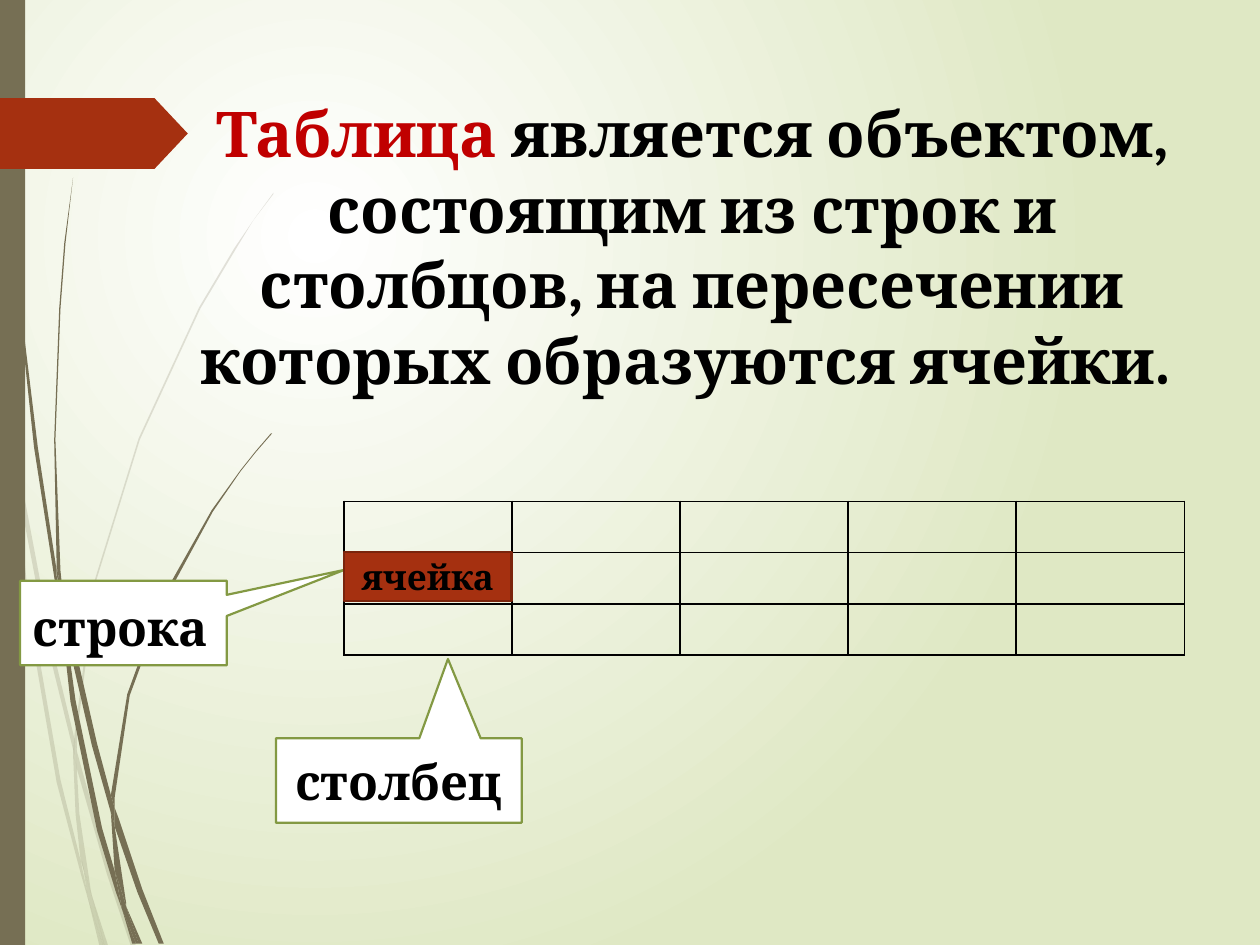
from dataclasses import dataclass

from lxml.etree import SubElement
from pptx import Presentation
from pptx.dml.color import RGBColor
from pptx.enum.shapes import MSO_SHAPE
from pptx.enum.text import MSO_ANCHOR, MSO_AUTO_SIZE, PP_ALIGN
from pptx.oxml.ns import qn
from pptx.util import Inches, Pt


@dataclass(frozen=True)
class Theme:
    font: str = "Cambria"
    ink: str = "000000"
    accent: str = "C00000"
    white: str = "FFFFFF"
    pale_green: str = "DFE8C4"
    green: str = "839943"
    olive: str = "766F54"
    rust: str = "A53010"
    dark_rust: str = "7A240C"
    title_size: int = 36
    callout_size: int = 28
    cell_size: int = 20
    outline: float = 1.25
    grid: float = 1


@dataclass(frozen=True)
class Box:
    left: float
    top: float
    width: float
    height: float

    def lengths(self) -> tuple:
        return tuple(Inches(v) for v in (self.left, self.top, self.width, self.height))


@dataclass(frozen=True)
class Label:
    box: Box
    kind: MSO_SHAPE
    fill: str
    line: str = ""
    text: str = ""
    size: int = 0
    adjustments: tuple = ()


THEME = Theme()

# Outlines of the grass blades, in inches
FAINT_BLADES = [
    [(.08, 3.5), (.06, 3.22), (0, 2.82), (0, 2.99), (.07, 3.44)],
    [(.4, 5.22), (.59, 5.99), (.59, 5.86), (.43, 5.2), (.1, 3.45), (.12, 3.76)],
    [(.64, 6.07), (.61, 5.96), (.61, 6.1), (.85, 6.94), (1.04, 7.51), (1.08, 7.51),
     (.88, 6.92)],
    [(.83, 7.51), (.86, 7.51), (.73, 7.11)],
    [(.64, 6.83), (.48, 6.19), (.22, 4.69), (.12, 3.76), (.08, 3.5), (.19, 4.7),
     (.45, 6.21), (.64, 6.93), (.7, 7.14), (.69, 7.07)],
    [(.58, 5.99), (.6, 6.46), (.64, 6.83), (.67, 6.92), (.73, 7.11), (.72, 7.06),
     (.63, 6.46), (.61, 6.1), (.61, 6.08)],
    [(.61, 5.84), (.76, 4.62), (1.11, 3.49), (1.59, 2.45), (1.87, 1.98), (2.01, 1.75),
     (2.17, 1.54), (2.17, 1.53), (2.01, 1.75), (1.86, 1.97), (1.58, 2.44), (1.1, 3.48),
     (.75, 4.61), (.59, 5.84), (.59, 5.86), (.61, 5.96)],
    [(.7, 7.14), (.79, 7.51), (.82, 7.51)],
    [(.61, 6.08), (.61, 6.1), (.61, 5.96), (.59, 5.86), (.58, 5.99)],
    [(.67, 6.92), (.65, 6.83), (.69, 7.07), (.7, 7.14), (.82, 7.51), (.83, 7.51),
     (.73, 7.11)],
]
SOLID_BLADES = [
    [(.05, 1.1), (.14, 2.33), (.27, 3.55), (.46, 4.77), (.47, 4.81), (.45, 4.57),
     (.45, 4.53), (.3, 3.55), (.15, 2.32), (.06, 1.09), (.04, .48), (.03, 0), (.02, 0),
     (.03, .48)],
    [(.73, 5.92), (.88, 6.45), (.88, 6.33), (.88, 6.31), (.77, 5.9), (.5, 4.72),
     (.53, 5.05)],
    [(.94, 6.49), (.91, 6.41), (.91, 6.56), (1.09, 7.08), (1.26, 7.49), (1.3, 7.49),
     (1.13, 7.06)],
    [(.91, 6.91), (.81, 6.57), (.6, 5.56), (.53, 5.05), (.47, 4.77), (.56, 5.57),
     (.77, 6.59), (.92, 7.08), (.97, 7.22), (.96, 7.17)],
    [(.5, 4.72), (.48, 4.53), (.44, 3.49), (.48, 2.45), (.52, 1.93), (.58, 1.41),
     (.51, 1.93), (.47, 2.45), (.43, 3.49), (.45, 4.49), (.49, 4.72)],
    [(1.1, 7.49), (1.13, 7.49), (1, 7.19)],
    [(.47, 4.77), (.53, 5.05), (.5, 4.72), (.49, 4.72), (.45, 4.49), (.45, 4.53)],
    [(.91, 6.33), (1.03, 5.52), (1.31, 4.76), (1.69, 4.06), (1.91, 3.74), (2.03, 3.59),
     (2.16, 3.44), (2.15, 3.44), (2.03, 3.58), (1.91, 3.73), (1.68, 4.05), (1.29, 4.74),
     (1.01, 5.51), (.88, 6.31), (.91, 6.41)],
    [(.97, 7.22), (1.05, 7.49), (1.08, 7.49)],
    [(.88, 6.45), (.91, 6.91), (.96, 7.06), (1, 7.19), (1, 7.16), (.91, 6.56),
     (.9, 6.51)],
    [(.88, 6.45), (.9, 6.51), (.91, 6.56), (.91, 6.41), (.88, 6.31), (.88, 6.33)],
    [(.96, 7.06), (.91, 6.91), (.96, 7.17), (.97, 7.22), (1.08, 7.49), (1.1, 7.49),
     (1, 7.19)],
]


def paint(shape, fill: str, line: str = "") -> None:
    shape.shadow.inherit = False
    shape.fill.solid()
    shape.fill.fore_color.rgb = RGBColor.from_string(fill)
    if line:
        shape.line.color.rgb = RGBColor.from_string(line)
        shape.line.width = Pt(THEME.outline)
    else:
        shape.line.fill.background()


def add_span(para, text: str, size: int, color: str = THEME.ink) -> None:
    span = para.add_run()
    span.text = text
    span.font.name = THEME.font
    span.font.size = Pt(size)
    span.font.bold = True
    span.font.color.rgb = RGBColor.from_string(color)


def draw_background(page) -> None:
    fill = page.background.fill
    fill.gradient()
    for stop, color in zip(fill.gradient_stops, (THEME.white, THEME.pale_green)):
        stop.color.rgb = RGBColor.from_string(color)
    gradient = page.background._cSld.find(".//" + qn("a:gradFill"))
    gradient.remove(gradient.find(qn("a:lin")))
    circle = SubElement(gradient, qn("a:path"), path="circle")
    SubElement(circle, qn("a:fillToRect"), l="50000", t="50000", r="100000", b="100000")


def draw_blades(page, blades: list, opacity: int) -> None:
    group = page.shapes.add_group_shape()
    for blade in blades:
        points = [(Inches(x), Inches(y)) for x, y in blade]
        builder = group.shapes.build_freeform(*points[0])
        builder.add_line_segments(points[1:], close=True)
        shape = builder.convert_to_shape()
        paint(shape, THEME.olive)
        if opacity < 100:
            color = shape._element.spPr.find(".//" + qn("a:srgbClr"))
            SubElement(color, qn("a:alpha"), val=str(opacity * 1000))


def draw_label(shapes, label: Label) -> None:
    shape = shapes.add_shape(label.kind, *label.box.lengths())
    for index, value in enumerate(label.adjustments):
        shape.adjustments[index] = value
    paint(shape, label.fill, label.line)
    if label.text:
        frame = shape.text_frame
        frame.vertical_anchor = MSO_ANCHOR.MIDDLE
        frame.paragraphs[0].alignment = PP_ALIGN.CENTER
        add_span(frame.paragraphs[0], label.text, label.size)


def draw_title(page) -> None:
    title = page.shapes.title
    page.shapes._spTree.append(title._element)
    title.left, title.top, title.width, title.height = Box(1.46, .7, 8.07, 2.52).lengths()
    frame = title.text_frame
    frame.word_wrap = True
    frame.auto_size = MSO_AUTO_SIZE.NONE
    frame.vertical_anchor = MSO_ANCHOR.TOP
    para = frame.paragraphs[0]
    para.alignment = PP_ALIGN.CENTER
    add_span(para, "Таблица", THEME.title_size, THEME.accent)
    add_span(para, " является объектом, состоящим из строк и столбцов, "
                   "на пересечении которых образуются ячейки. ", THEME.title_size)


def draw_table(page, box: Box, rows: int, columns: int) -> None:
    table = page.shapes.add_table(rows, columns, *box.lengths()).table
    table.first_row = table.horz_banding = False
    for cell in table.iter_cells():
        properties = cell._tc.get_or_add_tcPr()
        for side in ("lnL", "lnR", "lnT", "lnB"):
            border = SubElement(properties, qn(f"a:{side}"), w=str(Pt(THEME.grid)))
            SubElement(SubElement(border, qn("a:solidFill")), qn("a:srgbClr"), val=THEME.ink)
        cell.fill.background()


def draw_row_callout(page) -> None:
    group = page.shapes.add_group_shape()
    draw_label(group.shapes, Label(Box(.16, 4.61, 1.64, .67), MSO_SHAPE.RECTANGULAR_CALLOUT,
                                   THEME.white, THEME.green, adjustments=(1.07, -.63)))
    frame = group.shapes.add_textbox(*Box(.16, 4.69, 1.64, .57).lengths()).text_frame
    frame.word_wrap = True
    add_span(frame.paragraphs[0], "строка", THEME.callout_size)


def main() -> None:
    deck = Presentation()
    deck.slide_width, deck.slide_height = Inches(10), Inches(7.5)
    page = deck.slides.add_slide(deck.slide_layouts[5])

    # Backdrop: gradient, grass, side bar and arrow tab
    draw_background(page)
    draw_blades(page, FAINT_BLADES, 20)
    draw_blades(page, SOLID_BLADES, 100)
    draw_label(page.shapes, Label(Box(0, 0, .2, 7.5), MSO_SHAPE.RECTANGLE, THEME.olive))
    draw_label(page.shapes, Label(Box(0, .78, 1.49, .56), MSO_SHAPE.PENTAGON, THEME.rust,
                                  adjustments=(.47,)))

    # Definition, sample table and its callouts
    draw_title(page)
    draw_table(page, Box(2.73, 3.98, 6.67, 1.22), rows=3, columns=5)
    draw_row_callout(page)
    draw_label(page.shapes, Label(Box(2.19, 5.86, 1.95, .67), MSO_SHAPE.RECTANGULAR_CALLOUT,
                                  THEME.white, THEME.green, "столбец", THEME.callout_size,
                                  (.2, -1.44)))
    draw_label(page.shapes, Label(Box(2.73, 4.38, 1.33, .39), MSO_SHAPE.RECTANGLE, THEME.rust,
                                  THEME.dark_rust, "ячейка", THEME.cell_size))
    deck.save("out.pptx")


if __name__ == "__main__":
    main()
